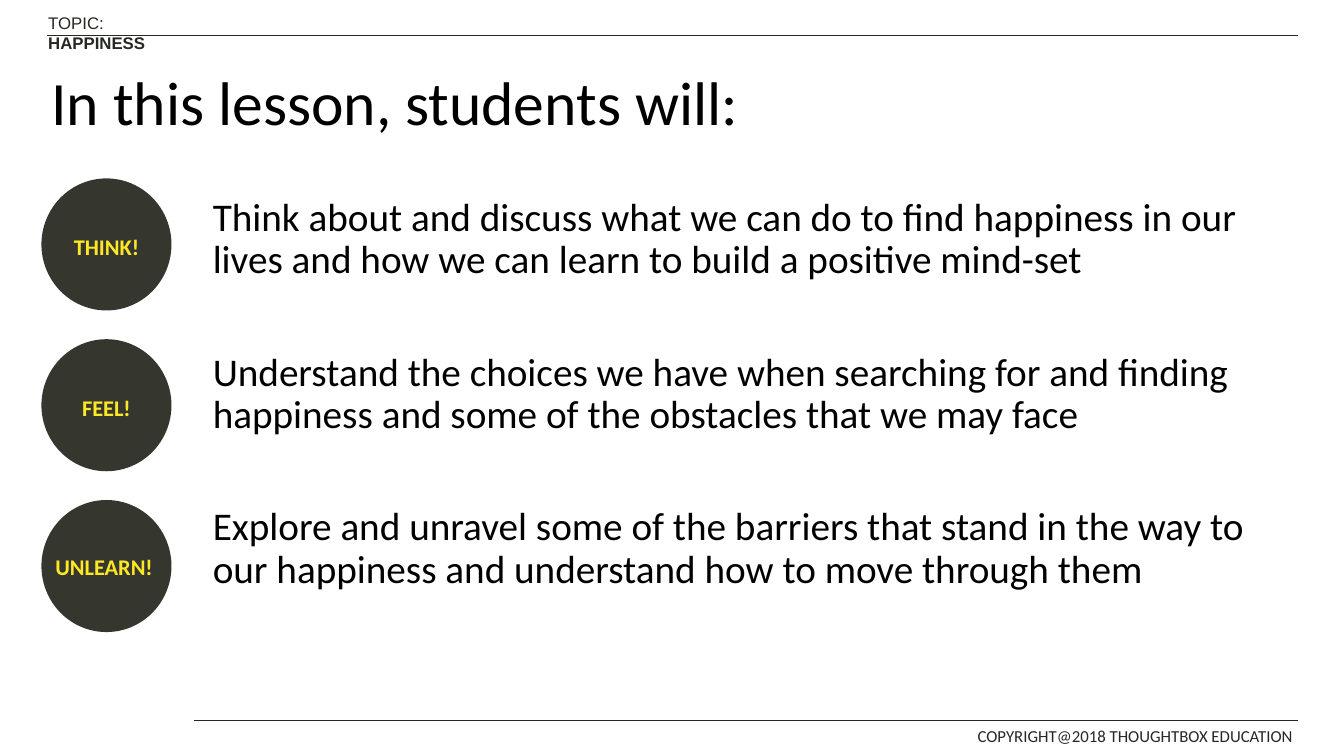
from dataclasses import dataclass
from lxml.etree import SubElement
from pptx import Presentation
from pptx.dml.color import RGBColor
from pptx.enum.shapes import MSO_CONNECTOR, MSO_SHAPE
from pptx.enum.text import MSO_ANCHOR, MSO_AUTO_SIZE, PP_ALIGN
from pptx.oxml.ns import qn
from pptx.util import Inches, Pt


@dataclass
class Theme:
    ink: str = "000000"
    trim: str = "252823"
    disc: str = "35372F"
    glow: str = "FEE725"
    font: str = "Calibri"
    head: int = 44
    body: int = 28
    label: int = 16
    small: int = 12


theme = Theme()
deck = Presentation()
deck.slide_width, deck.slide_height = Inches(13.33), Inches(7.5)
slide = deck.slides.add_slide(deck.slide_layouts[1])
shapes = slide.shapes


def place(x, y, wide=0, high=0):
    """Turn percent shares of the slide into lengths."""
    w, h = deck.slide_width / 100, deck.slide_height / 100
    return int(x * w), int(y * h), int(wide * w), int(high * h)


def write(par, text, size, color, bold=False, font=theme.font):
    run = par.add_run()
    run.text = text
    run.font.name, run.font.size, run.font.bold = font, Pt(size), bold
    run.font.color.rgb = RGBColor.from_string(color)


# Rules at the top and bottom
for start, level in ((3.53, 4.67), (14.4, 95.33)):
    x, y = place(start, level)[:2]
    rule = shapes.add_connector(MSO_CONNECTOR.STRAIGHT, x, y, place(96.6, 0)[0], y)
    rule.line.color.rgb = RGBColor.from_string(theme.trim)
    rule.line.width = Pt(1)
    SubElement(rule._element.spPr, qn("a:effectLst"))

# Topic and copyright line
topic = shapes.add_textbox(*place(2.85, 1.07, 11.4, 4)).text_frame
topic.word_wrap = True
write(topic.paragraphs[0], "TOPIC: ", theme.small, theme.trim, font="Arial")
write(topic.paragraphs[0], "HAPPINESS", theme.small, theme.trim, True, "Arial")

notice = shapes.add_textbox(*place(72, 95.33, 25.5, 4.13)).text_frame
notice.word_wrap = True
write(notice.paragraphs[0], "COPYRIGHT@2018 THOUGHTBOX EDUCATION", theme.small, theme.trim)

# Title
title = shapes.title
title.left, title.top, title.width, title.height = place(3.08, 4.27, 86.25, 19.33)
title.text_frame.auto_size = MSO_AUTO_SIZE.NONE
title.text_frame.vertical_anchor = MSO_ANCHOR.MIDDLE
par = title.text_frame.paragraphs[0]
par.alignment, par.line_spacing = PP_ALIGN.LEFT, 0.9
write(par, "In this lesson, students will:", theme.head, theme.ink)

# Lesson goals
goals = (
    "Think about and discuss what we can do to find happiness in our lives and how we can learn to build a positive mind-set",
    "Understand the choices we have when searching for and finding happiness and some of the obstacles that we may face",
    "Explore and unravel some of the barriers that stand in the way to our happiness and understand how to move through them",
)
body = slide.placeholders[1]
body.left, body.top, body.width, body.height = place(15.08, 25.47, 81.83, 63.47)
frame = body.text_frame
frame.auto_size = MSO_AUTO_SIZE.NONE
for i, goal in enumerate(goals):
    par = frame.add_paragraph() if i else frame.paragraphs[0]
    props = par._p.get_or_add_pPr()
    props.set("marL", "0")
    props.set("indent", "0")
    SubElement(props, qn("a:buNone"))
    par.line_spacing = 0.9
    par.space_before = Pt(50 if i else 0)
    write(par, goal, theme.body, theme.ink)

# Discs, evenly stepped down the left side
for i, label in enumerate(("THINK!", "FEEL!", "")):
    disc = shapes.add_shape(MSO_SHAPE.OVAL, *place(3.08, 23.6 + i * 21.27, 9.68, 17.47))
    disc.shadow.inherit = False
    disc.fill.solid()
    disc.fill.fore_color.rgb = RGBColor.from_string(theme.disc)
    disc.line.fill.background()
    if label:
        disc.text_frame.vertical_anchor = MSO_ANCHOR.MIDDLE
        par = disc.text_frame.paragraphs[0]
        par.alignment, par.line_spacing = PP_ALIGN.CENTER, 1.15
        par.space_after = Pt(10)
        write(par, label, theme.label, theme.glow, True)

# The longest label is wider than its disc's text area
wide = shapes.add_textbox(*place(3.38, 72.53, 9, 4.93)).text_frame
wide.word_wrap = True
write(wide.paragraphs[0], "UNLEARN!", theme.label, theme.glow, True)

deck.save("out.pptx")
